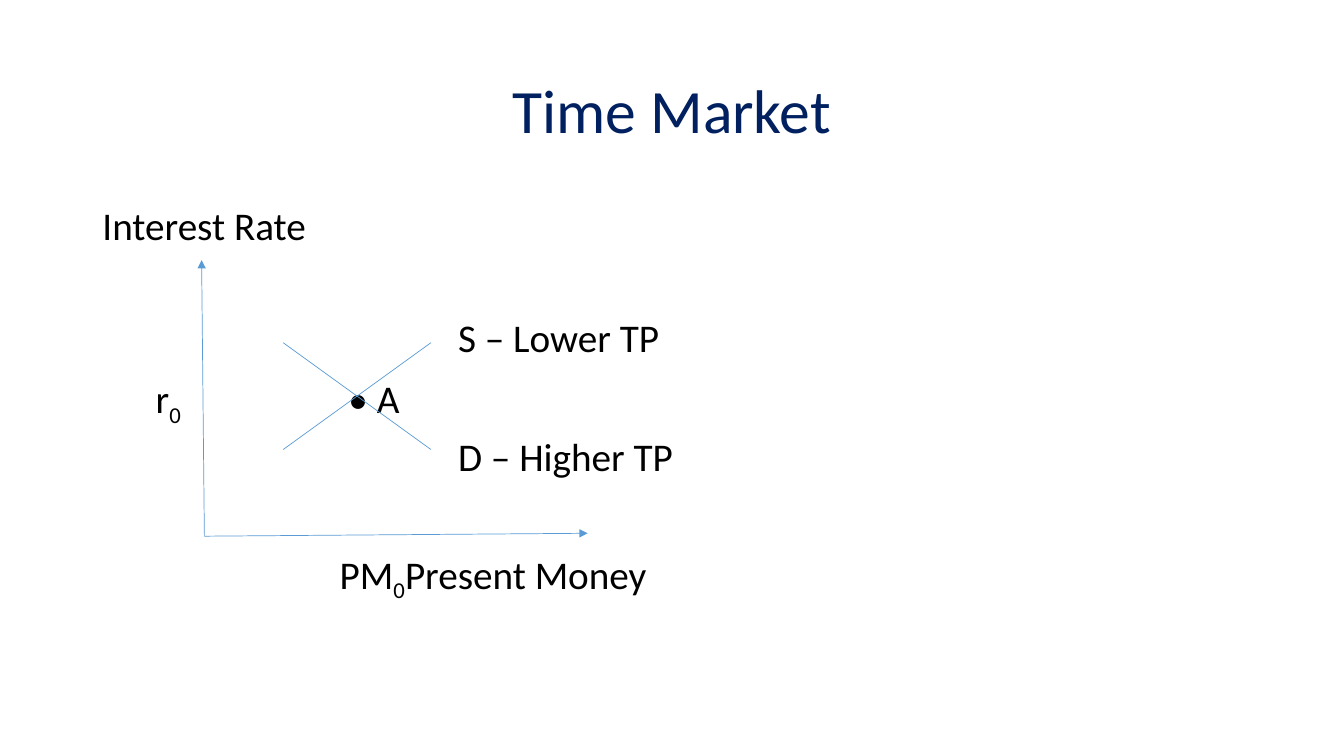
from dataclasses import dataclass

from lxml import etree
from pptx import Presentation
from pptx.dml.color import RGBColor
from pptx.enum.shapes import MSO_CONNECTOR
from pptx.enum.text import MSO_ANCHOR, MSO_AUTO_SIZE, PP_ALIGN
from pptx.oxml.ns import qn
from pptx.util import Pt

STRAIGHT = MSO_CONNECTOR.STRAIGHT
MIDDLE = MSO_ANCHOR.MIDDLE
FIXED = MSO_AUTO_SIZE.NONE
CENTER = PP_ALIGN.CENTER


@dataclass(frozen=True)
class Theme:
    font: str = "Calibri"
    title_size: float = 44
    label_size: float = 28
    line_width: float = 0.5
    title_color: RGBColor = RGBColor(0x00, 0x20, 0x60)
    label_color: RGBColor = RGBColor(0x00, 0x00, 0x00)
    line_color: RGBColor = RGBColor(0x5B, 0x9B, 0xD5)


THEME = Theme()


def format_run(run, size, color):
    run.font.name = THEME.font
    run.font.size = Pt(size)
    run.font.color.rgb = color


def add_title(slide, box, wording):
    title = slide.shapes.title
    title.left, title.top, title.width, title.height = map(Pt, box)
    frame = title.text_frame
    frame.text = wording
    frame.auto_size = FIXED
    frame.vertical_anchor = MIDDLE
    heading = frame.paragraphs[0]
    heading.alignment = CENTER
    heading.line_spacing = 0.9
    format_run(heading.runs[0], THEME.title_size, THEME.title_color)


def add_label(slide, left, top, width, wording, subscript=""):
    label = slide.shapes.add_textbox(Pt(left), Pt(top), Pt(width), Pt(34.2))
    frame = label.text_frame
    frame.margin_left = frame.margin_right = 0
    frame.margin_top = frame.margin_bottom = 0
    frame.word_wrap = False
    frame.text = wording
    paragraph = frame.paragraphs[0]
    if subscript:
        index = paragraph.add_run()
        index.text = subscript
        index.font._element.set("baseline", "-25000")
    for run in paragraph.runs:
        format_run(run, THEME.label_size, THEME.label_color)


def add_line(slide, start, end, arrow=False):
    line = slide.shapes.add_connector(STRAIGHT, *map(Pt, (*start, *end)))
    line.line.color.rgb = THEME.line_color
    line.line.width = Pt(THEME.line_width)
    if arrow:
        outline = line.line._get_or_add_ln()
        etree.SubElement(outline, qn("a:tailEnd"), type="triangle")
    etree.SubElement(line._element.spPr, qn("a:effectLst"))


def add_market_diagram(slide, box):
    left, top, _, _ = box
    curve_label, money_row, balance_row = 261.2, 248.7, 123.2
    labels = [
        (7.2, 0.1, 160, "Interest Rate", ""),
        (curve_label, 79.6, 160, "S – Lower TP", ""),
        (45.2, balance_row, 32, "r", "0"),
        (182.9, balance_row, 44, "• A", ""),
        (curve_label, 165.1, 170, "D – Higher TP", ""),
        (176.6, money_row, 70, "PM", "0"),
        (223.3, money_row, 190, "Present Money", ""),
    ]
    for x, y, width, wording, subscript in labels:
        add_label(slide, left + x, top + y, width, wording, subscript)

    origin = (left + 80, top + 239)
    add_line(slide, origin, (left + 78, top + 41.8), arrow=True)
    add_line(slide, origin, (left + 353.8, top + 236.9), arrow=True)

    curve_left, curve_right = left + 136.3, left + 241.8
    high_rate, low_rate = top + 100.8, top + 177.1
    add_line(slide, (curve_left, high_rate), (curve_right, low_rate))
    add_line(slide, (curve_left, low_rate), (curve_right, high_rate))


def main():
    deck = Presentation()
    deck.slide_width, deck.slide_height = Pt(960), Pt(540)
    slide = deck.slides.add_slide(deck.slide_layouts[5])
    add_title(slide, (66, 28.8, 828, 104.4), "Time Market")
    add_market_diagram(slide, (66, 144, 828, 342.7))
    deck.save("out.pptx")


if __name__ == "__main__":
    main()
